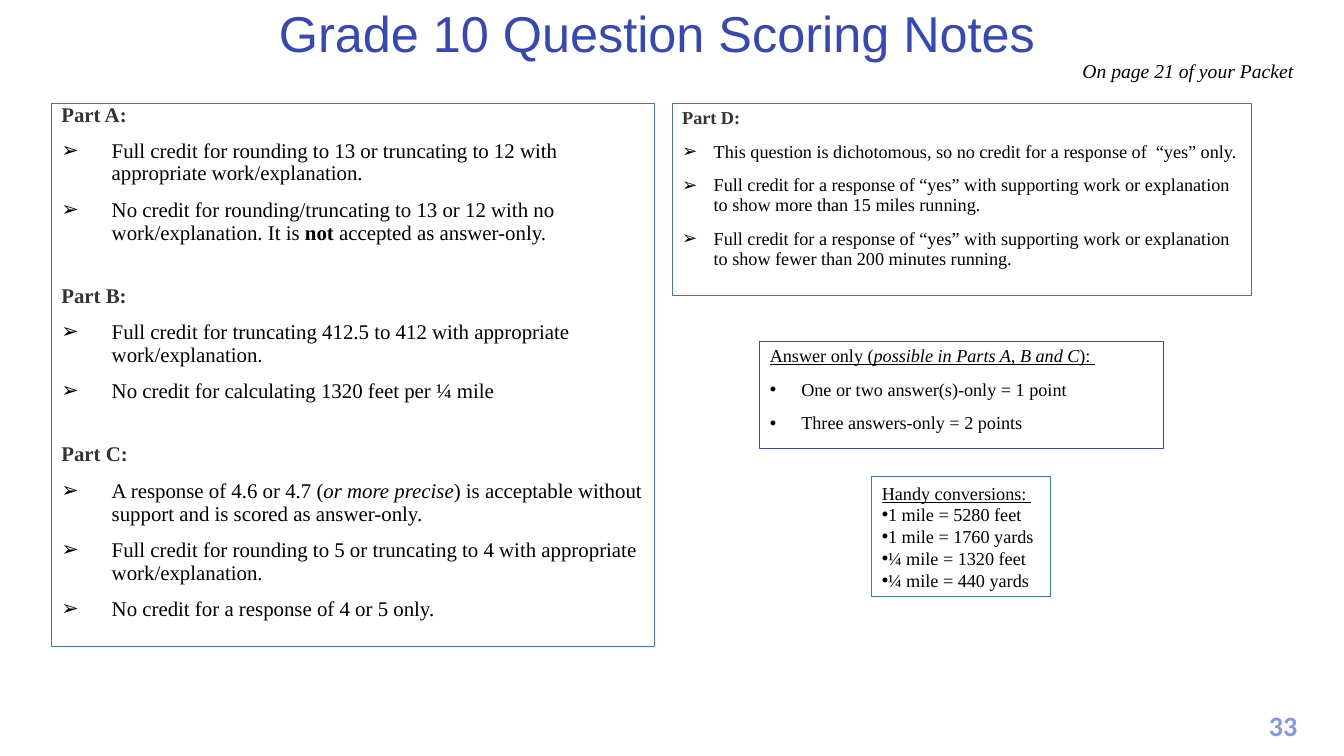
import dataclasses

import lxml.etree
import pptx
import pptx.dml.color
import pptx.enum.shapes
import pptx.enum.text
import pptx.oxml.ns
import pptx.util

Pt = pptx.util.Pt
Align = pptx.enum.text.PP_ALIGN
Anchor = pptx.enum.text.MSO_ANCHOR


@dataclasses.dataclass(frozen=True)
class Theme:
    serif: str = "Times New Roman"
    sans: str = "Arial"
    number_font: str = "Calibri"
    title_color: str = "3647B6"
    number_color: str = "8397E7"
    border: str = "4472C4"
    heading: str = "333333"
    ink: str = "000000"
    title_size: float = 36
    number_size: float = 20
    note_size: float = 14
    parts_size: float = 14.9
    card_size: float = 13


THEME = Theme()

PARTS = [
    ("Part A:", [
        [("Full credit for rounding to 13 or truncating to 12 with appropriate work/explanation.", "")],
        [("No credit for rounding/truncating to 13 or 12 with no work/explanation. It is ", ""),
         ("not", "b"), (" accepted as answer-only.", "")],
    ]),
    ("Part B:", [
        [("Full credit for truncating 412.5 to 412 with appropriate work/explanation.", "")],
        [("No credit for calculating 1320 feet per ¼ mile", "")],
    ]),
    ("Part C:", [
        [("A response of 4.6 or 4.7 (", ""), ("or more precise", "i"),
         (") is acceptable without support and is scored as answer-only.", "")],
        [("Full credit for rounding to 5 or truncating to 4 with appropriate work/explanation.", "")],
        [("No credit for a response of 4 or 5 only.", "")],
    ]),
]
PART_D = [
    "This question is dichotomous, so no credit for a response of  “yes” only.",
    "Full credit for a response of “yes” with supporting work or explanation to show more than 15 miles running.",
    "Full credit for a response of “yes” with supporting work or explanation to show fewer than 200 minutes running.",
]
ANSWER_HEADING = [("Answer only (", "u"), ("possible in Parts A, B and C", "ui"), ("): ", "u")]
ANSWERS = ["One or two answer(s)-only = 1 point", "Three answers-only = 2 points"]
CONVERSIONS = ["1 mile = 5280 feet", "1 mile = 1760 yards", "¼ mile = 1320 feet", "¼ mile = 440 yards"]


def rgb(color):
    return pptx.dml.color.RGBColor.from_string(color)


def add_spans(para, spans, size, color, font=THEME.serif):
    for text, marks in spans:
        span = para.add_run()
        span.text = text
        span.font.name = font
        span.font.size = Pt(size)
        span.font.color.rgb = rgb(color)
        span.font.bold = "b" in marks
        span.font.italic = "i" in marks
        span.font.underline = "u" in marks


def add_bullet(para, symbol, indent):
    properties = para._p.get_or_add_pPr()
    properties.set("marL", str(Pt(indent)))
    properties.set("indent", str(-Pt(indent)))
    for tag, key, value in (("a:buFont", "typeface", THEME.sans), ("a:buChar", "char", symbol)):
        lxml.etree.SubElement(properties, pptx.oxml.ns.qn(tag)).set(key, value)


def add_label(page, box, text, size, color, font, marks="", align=Align.LEFT, anchor=Anchor.TOP):
    frame = page.shapes.add_textbox(*map(Pt, box)).text_frame
    frame.word_wrap = True
    frame.vertical_anchor = anchor
    para = frame.paragraphs[0]
    para.alignment = align
    add_spans(para, [(text, marks)], size, color, font)
    return para


def add_card(page, box, border):
    card = page.shapes.add_shape(pptx.enum.shapes.MSO_SHAPE.RECTANGLE, *map(Pt, box))
    card.shadow.inherit = False
    card.fill.background()
    card.line.color.rgb = rgb(border)
    card.line.width = Pt(0.75)
    card.text_frame.word_wrap = True
    card.text_frame.vertical_anchor = Anchor.TOP
    return card.text_frame


def add_section(frame, heading, items, size, color, symbol, indent, spacing=0.9, gap=10, lead=29):
    first = not frame.paragraphs[0].runs
    para = frame.paragraphs[0] if first else frame.add_paragraph()
    para.alignment = Align.LEFT
    para.line_spacing = 0.7 if first and lead == 0 else spacing
    para.space_before = Pt(0 if first else lead)
    add_spans(para, heading, size, color)
    for item in items:
        para = frame.add_paragraph()
        add_bullet(para, symbol, indent)
        para.alignment = Align.LEFT
        para.line_spacing = spacing
        para.space_before = Pt(gap)
        add_spans(para, item, size, THEME.ink)


def plain(items):
    return [[(text, "")] for text in items]


def add_header(page, box):
    left, top, width, height = box
    title = add_label(page, box, "Grade 10 Question Scoring Notes", THEME.title_size,
                      THEME.title_color, THEME.sans, align=Align.CENTER, anchor=Anchor.BOTTOM)
    title.line_spacing = 0.9
    add_label(page, (left + 729.4, top + 20.9, 166.5, 25.2), "On page 21 of your Packet",
              THEME.note_size, THEME.ink, THEME.serif, "i")


def add_parts(page, box):
    frame = add_card(page, box, THEME.border)
    for index, (heading, items) in enumerate(PARTS):
        add_section(frame, [(heading, "b")], items, THEME.parts_size, THEME.heading, "➢", 36,
                    lead=29 if index else 0)


def add_side(page, box):
    left, top, width, height = box
    part_d = add_card(page, (left, top, width, 136.8), THEME.border)
    add_section(part_d, [("Part D:", "b")], plain(PART_D), THEME.card_size, THEME.heading, "➢", 22.5)
    answers = add_card(page, (left + 62.6, top + 170, 288, 76.3), THEME.title_color)
    add_section(answers, ANSWER_HEADING, plain(ANSWERS), THEME.card_size, THEME.ink, "•", 22.5)
    handy = add_card(page, (left + 142.6, top + 266.4, 127.5, 85.7), THEME.border)
    add_section(handy, [("Handy conversions: ", "u")], plain(CONVERSIONS), THEME.card_size,
                THEME.ink, "•", 0, spacing=1.0, gap=0)


def add_page_number(page, box):
    add_label(page, box, "33", THEME.number_size, THEME.number_color, THEME.number_font, "b", Align.CENTER)


def main():
    deck = pptx.Presentation()
    deck.slide_width, deck.slide_height = Pt(960), Pt(540)
    page = deck.slides.add_slide(deck.slide_layouts[6])
    add_page_number(page, (894.2, 502.5, 44.6, 31.7))
    add_header(page, (36.7, 17.3, 865.4, 31.7))
    add_parts(page, (36.7, 74.2, 430.6, 387.4))
    add_side(page, (480.2, 74.2, 414, 352.1))
    deck.save("out.pptx")


if __name__ == "__main__":
    main()
